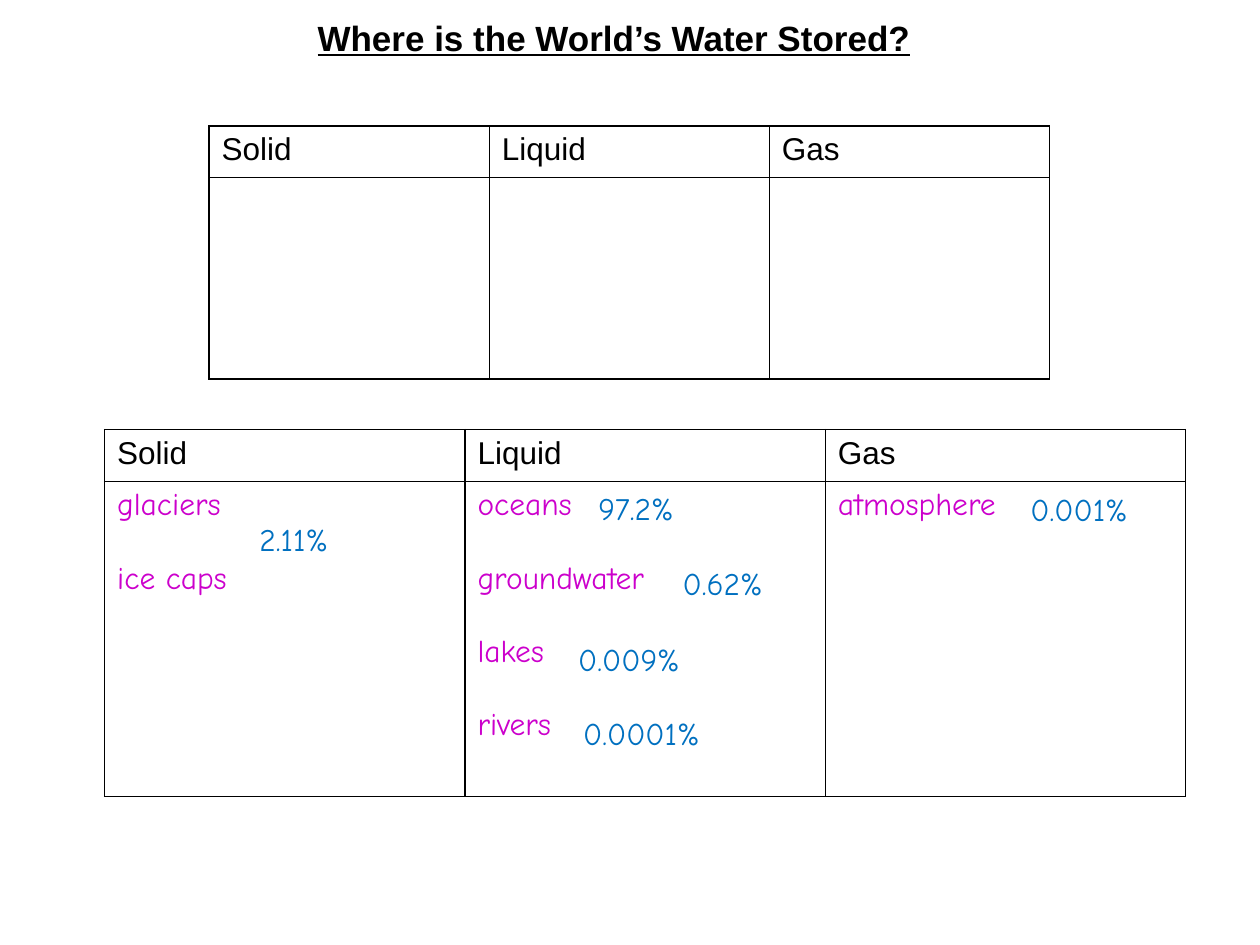
from lxml import etree
from pptx import Presentation
from pptx.dml.color import RGBColor
from pptx.enum.text import MSO_ANCHOR, MSO_AUTO_SIZE, PP_ALIGN
from pptx.oxml.ns import qn
from pptx.util import Inches, Pt

COLORS = {"ink": "000000", "store": "CC00CC", "share": "0070C0"}
STATES = ["Solid", "Liquid", "Gas"]
STORES = [["glaciers", "ice caps"],
          ["oceans", "groundwater", "lakes", "rivers"],
          ["atmosphere"]]


def style(tf, font, color, size=18):
    for p in tf.paragraphs:
        p.font.size = Pt(size)
        for r in p.runs:
            r.font.name = font
            r.font.size = Pt(size)
            r.font.color.rgb = RGBColor.from_string(COLORS[color])


def add_border(cell):
    """Draw a 1 pt line on all four sides of a cell."""
    tc_pr = cell._tc.get_or_add_tcPr()
    for i, side in enumerate(["lnL", "lnR", "lnT", "lnB"]):
        ln = etree.Element(qn(f"a:{side}"), w=str(Pt(1)))
        fill = etree.SubElement(ln, qn("a:solidFill"))
        etree.SubElement(fill, qn("a:srgbClr"), val=COLORS["ink"])
        tc_pr.insert(i, ln)


prs = Presentation()
prs.slide_width, prs.slide_height = Inches(10), Inches(7.5)
s = prs.slides.add_slide(prs.slide_layouts[5])

# Title
title = s.shapes.title
title.left, title.top = Inches(2.42), Inches(0.08)
title.width, title.height = Inches(5.15), Inches(0.43)
tf = title.text_frame
tf.text = "Where is the World’s Water Stored?"
tf.word_wrap = True
tf.auto_size = MSO_AUTO_SIZE.SHAPE_TO_FIT_TEXT
tf.vertical_anchor = MSO_ANCHOR.TOP
p = tf.paragraphs[0]
p.alignment = PP_ALIGN.LEFT
style(tf, "Arial", "ink", 20)
p.runs[0].font.bold = True
p.runs[0].font.underline = True

# Blank table to fill in, then the answer table
header_height = 0.41
for left, top, width, body_height, stores in [
    (1.66, 1, 6.67, 1.6, [[], [], []]),
    (0.83, 3.41, 8.58, 2.5, STORES),
]:
    table = s.shapes.add_table(2, len(STATES), Inches(left), Inches(top), Inches(width),
                               Inches(header_height + body_height)).table
    table.first_row = table.horz_banding = False
    table.rows[0].height = Inches(header_height)
    table.rows[1].height = Inches(body_height)
    for col, (state, names) in enumerate(zip(STATES, stores)):
        header, body = table.cell(0, col), table.cell(1, col)
        header.text_frame.text = state
        style(header.text_frame, "Arial", "ink")
        body.text_frame.text = "\n".join(names)
        style(body.text_frame, "Comic Neue", "store")
        for p in body.text_frame.paragraphs[:-1]:
            p.space_after = Pt(21)
        for cell in (header, body):
            cell.fill.background()
            add_border(cell)

# Share of the world's water beside each store
for share, left, top, width in [
    ("2.11%", 1.96, 4.08, 0.85),
    ("97.2%", 4.65, 3.83, 0.93),
    ("0.62%", 5.32, 4.43, 0.93),
    ("0.009%", 4.49, 5.03, 1.09),
    ("0.0001%", 4.53, 5.62, 1.2),
    ("0.001%", 8.08, 3.84, 1.06),
]:
    tf = s.shapes.add_textbox(Inches(left), Inches(top), Inches(width), Inches(0.4)).text_frame
    tf.text = share
    tf.word_wrap = False
    tf.auto_size = MSO_AUTO_SIZE.SHAPE_TO_FIT_TEXT
    style(tf, "Comic Neue", "share")

prs.save("out.pptx")
